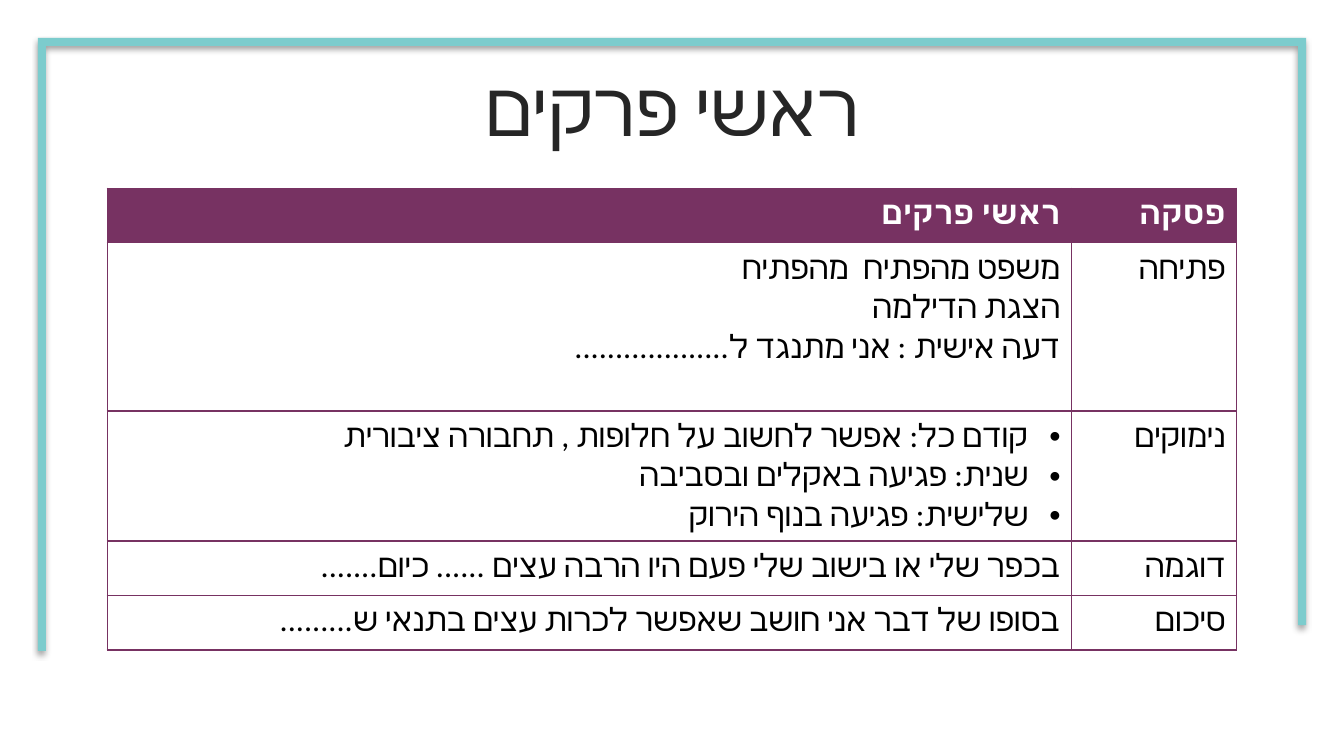
from lxml import etree
from pptx import Presentation
from pptx.dml.color import RGBColor
from pptx.enum import text
from pptx.oxml import ns
from pptx.util import Pt

TEAL = RGBColor(0x7C, 0xCC, 0xCD)
PLUM = RGBColor(0x77, 0x32, 0x62)
WHITE = RGBColor(0xFF, 0xFF, 0xFF)
BLACK = RGBColor(0, 0, 0)
CHARCOAL = RGBColor(0x26, 0x26, 0x26)
FONT = "Calibri"


def add_element(parent, tag, **attributes):
    return etree.SubElement(parent, ns.qn(tag), attributes)


def add_run(paragraph, wording, size, color, bold=False):
    run = paragraph.add_run()
    run.text = wording
    run.font.size = Pt(size)
    run.font.bold = bold
    run.font.name = FONT
    run.font.color.rgb = color
    add_element(run.font._element, "a:cs", typeface=FONT)


presentation = Presentation()
presentation.slide_width = Pt(960)
presentation.slide_height = Pt(540)
slide = presentation.slides.add_slide(presentation.slide_layouts[6])

left, top, right, thickness = 27, 27, 933, 5.75
right_end, left_end = 446.5, 465
outline = [
    (right, top), (right, right_end), (right - thickness, right_end),
    (right - thickness, top + thickness), (left + thickness, top + thickness),
    (left + thickness, left_end), (left, left_end),
]
builder = slide.shapes.build_freeform(Pt(left), Pt(top), scale=1.0)
builder.add_line_segments([(Pt(x), Pt(y)) for x, y in outline], close=True)
frame = builder.convert_to_shape()
frame.fill.solid()
frame.fill.fore_color.rgb = TEAL
frame.line.fill.background()
frame.shadow.inherit = False
effects = frame._element.spPr.find(ns.qn("a:effectLst"))
shadow = add_element(effects, "a:outerShdw", blurRad=str(Pt(4)), dist=str(Pt(3)),
                     dir="5400000", algn="t", rotWithShape="0")
shadow_color = add_element(shadow, "a:srgbClr", val=str(BLACK))
add_element(shadow_color, "a:alpha", val="40000")

title = slide.shapes.add_textbox(Pt(24.5), Pt(51.8), Pt(911.5), Pt(56.9))
title.text_frame.word_wrap = True
title.text_frame.vertical_anchor = text.MSO_ANCHOR.MIDDLE
paragraph = title.text_frame.paragraphs[0]
paragraph.alignment = text.PP_ALIGN.CENTER
paragraph.line_spacing = 0.9
add_run(paragraph, "ראשי פרקים", 54, CHARCOAL)

rows = [
    (38.9, "פסקה", ["ראשי פרקים"]),
    (120.2, "פתיחה", ["משפט מהפתיח  מהפתיח", "הצגת הדילמה",
                      "דעה אישית : אני מתנגד ל..................."]),
    (92.9, "נימוקים", ["קודם כל: אפשר לחשוב על חלופות , תחבורה ציבורית",
                       "שנית: פגיעה באקלים ובסביבה",
                       "שלישית: פגיעה בנוף הירוק"]),
    (38.9, "דוגמה", ["בכפר שלי או בישוב שלי פעם היו הרבה עצים ...... כיום......."]),
    (38.9, "סיכום", ["בסופו של דבר אני חושב שאפשר לכרות עצים בתנאי ש........."]),
]
HEADER_ROW, OPENING_ROW, REASONS_ROW = 0, 1, 2
column_widths = [689, 118]
table = slide.shapes.add_table(
    len(rows), len(column_widths), Pt(76.5), Pt(134.5),
    Pt(sum(column_widths)), Pt(sum(row[0] for row in rows))).table
for column, width in zip(table.columns, column_widths):
    column.width = Pt(width)

for row_index, (height, section, points) in enumerate(rows):
    table.rows[row_index].height = Pt(height)
    is_header = row_index == HEADER_ROW
    for column_index, lines in enumerate([points, [section]]):
        cell = table.cell(row_index, column_index)
        cell.margin_left = cell.margin_right = Pt(8)
        cell.margin_top = cell.margin_bottom = Pt(4)
        cell.fill.solid()
        cell.fill.fore_color.rgb = PLUM if is_header else WHITE
        properties = cell._tc.tcPr
        if row_index == OPENING_ROW:
            add_element(properties.find(".//" + ns.qn("a:srgbClr")), "a:alpha", val="20000")
        for position, side in enumerate(["a:lnL", "a:lnR", "a:lnT", "a:lnB"]):
            border = etree.Element(ns.qn(side), w=str(Pt(1)))
            add_element(add_element(border, "a:solidFill"), "a:srgbClr", val=str(PLUM))
            properties.insert(position, border)
        for line_index, line in enumerate(lines):
            text_frame = cell.text_frame
            paragraph = text_frame.add_paragraph() if line_index else text_frame.paragraphs[0]
            paragraph.alignment = text.PP_ALIGN.RIGHT
            paragraph_properties = paragraph._p.get_or_add_pPr()
            paragraph_properties.set("rtl", "1")
            if row_index == REASONS_ROW and column_index == 0:
                paragraph_properties.set("marR", str(Pt(0)))
                paragraph_properties.set("marL", str(Pt(22.5)))
                paragraph_properties.set("indent", str(Pt(-22.5)))
                add_element(paragraph_properties, "a:buFont", typeface="Arial")
                add_element(paragraph_properties, "a:buChar", char="•")
            add_run(paragraph, line, 23, WHITE if is_header else BLACK, is_header)

presentation.save("out.pptx")
